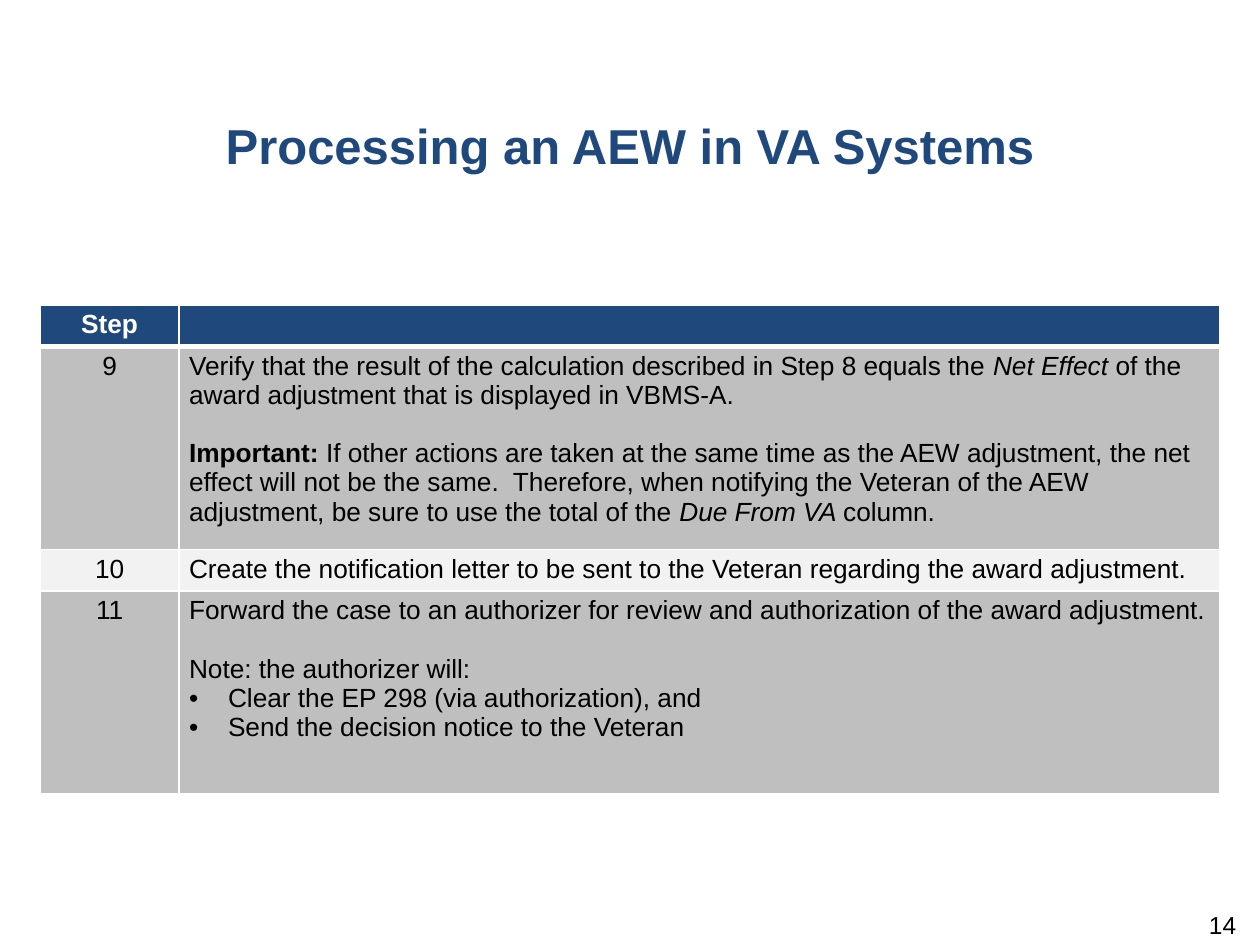
from lxml import etree
from pptx import Presentation
from pptx.dml.color import RGBColor
from pptx.enum.text import MSO_ANCHOR, PP_ALIGN
from pptx.oxml.ns import qn
from pptx.util import Inches, Pt

LEFT, CENTER, RIGHT = PP_ALIGN.LEFT, PP_ALIGN.CENTER, PP_ALIGN.RIGHT
TOP = MSO_ANCHOR.TOP
FONT = "Arial"
BODY_SIZE = 15
LINE_GAP = 16.7
COLORS = {
    "navy": "1F497D",
    "white": "FFFFFF",
    "black": "000000",
    "gray": "BFBFBF",
    "pale": "F2F2F2",
}

COLUMNS = (1.1, 8.26)
ROWS = (0.33, 1.61, 0.33, 1.61)

STEPS = [
    ("9", "gray", [
        ("plain", [
            ("Verify that the result of the calculation described in Step 8 equals the ", ""),
            ("Net Effect", "italic"),
            (" of the award adjustment that is displayed in VBMS-A.", ""),
        ]),
        ("gap", [
            ("Important:", "bold"),
            (" If other actions are taken at the same time as the AEW adjustment, "
             "the net effect will not be the same.  Therefore, when notifying the Veteran "
             "of the AEW adjustment, be sure to use the total of the ", ""),
            ("Due From VA ", "italic"),
            ("column.", ""),
        ]),
    ]),
    ("10", "pale", [
        ("plain", [("Create the notification letter to be sent to the Veteran "
                    "regarding the award adjustment.", "")]),
    ]),
    ("11", "gray", [
        ("plain", [("Forward the case to an authorizer for review and authorization "
                    "of the award adjustment.", "")]),
        ("gap", [("Note: the authorizer will:", "")]),
        ("bullet", [("Clear the EP 298 (via authorization), and", "")]),
        ("bullet", [("Send the decision notice to the Veteran", "")]),
    ]),
]


def color(name):
    return RGBColor.from_string(COLORS[name])


def style_span(span, size, ink, style=""):
    span.font.name = FONT
    span.font.size = Pt(size)
    span.font.color.rgb = color(ink)
    span.font.bold = style == "bold"
    span.font.italic = style == "italic"


def add_text(page, box, text, size, ink, align, insets, style=""):
    shape = page.shapes.add_textbox(*(Inches(length) for length in box))
    frame = shape.text_frame
    frame.word_wrap = True
    frame.vertical_anchor = TOP
    frame.margin_left = frame.margin_right = Inches(0.1)
    frame.margin_top, frame.margin_bottom = (Inches(inset) for inset in insets)
    frame.text = text
    para = frame.paragraphs[0]
    para.alignment = align
    style_span(para.runs[0], size, ink, style)


def add_bullet(para):
    properties = para._p.get_or_add_pPr()
    properties.set("marL", str(Inches(0.31)))
    properties.set("indent", str(-Inches(0.31)))
    etree.SubElement(properties, qn("a:buFont"), typeface=FONT)
    etree.SubElement(properties, qn("a:buChar"), char="•")


def add_borders(cell, widths):
    properties = cell._tc.get_or_add_tcPr()
    for side, width in zip(("lnL", "lnR", "lnT", "lnB"), widths):
        line = etree.SubElement(properties, qn("a:" + side), w=str(Pt(width)))
        fill = etree.SubElement(line, qn("a:solidFill"))
        etree.SubElement(fill, qn("a:srgbClr"), val=COLORS["white"])


def fill_cell(cell, paragraphs, background, ink, align):
    cell.fill.solid()
    cell.fill.fore_color.rgb = color(background)
    cell.vertical_anchor = TOP
    cell.margin_left = cell.margin_right = Inches(0.08)
    cell.margin_top = cell.margin_bottom = Inches(0.04)
    frame = cell.text_frame
    if not paragraphs:
        etree.SubElement(frame.paragraphs[0]._p, qn("a:endParaRPr"),
                         sz=str(BODY_SIZE * 100))
    for index, (kind, spans) in enumerate(paragraphs):
        para = frame.add_paragraph() if index else frame.paragraphs[0]
        para.alignment = align
        if kind == "gap":
            para.space_before = Pt(LINE_GAP)
        if kind == "bullet":
            add_bullet(para)
        for text, style in spans:
            span = para.add_run()
            span.text = text
            style_span(span, BODY_SIZE, ink, style)


def add_steps_table(page, box):
    shape = page.shapes.add_table(len(ROWS), len(COLUMNS),
                                  *(Inches(length) for length in box))
    table = shape.table
    for column, width in zip(table.columns, COLUMNS):
        column.width = Inches(width)
    for row, height in zip(table.rows, ROWS):
        row.height = Inches(height)
    for row_index in range(len(ROWS)):
        widths = (1, 1, 3 if row_index == 1 else 1, 3 if row_index == 0 else 1)
        for cell in table.rows[row_index].cells:
            add_borders(cell, widths)

    heading = [("plain", [("Step", "bold")])]
    fill_cell(table.cell(0, 0), heading, "navy", "white", CENTER)
    fill_cell(table.cell(0, 1), [], "navy", "white", LEFT)
    for index, (number, background, paragraphs) in enumerate(STEPS, start=1):
        label = [("plain", [(number, "")])]
        fill_cell(table.cell(index, 0), label, background, "black", CENTER)
        fill_cell(table.cell(index, 1), paragraphs, background, "black", LEFT)


def main():
    deck = Presentation()
    deck.slide_width, deck.slide_height = Inches(10), Inches(7.5)
    page = deck.slides.add_slide(deck.slide_layouts[6])
    add_text(page, (0, 0.87, 10, 1.19), "Processing an AEW in VA Systems",
             28, "navy", CENTER, (0.05, 0.05), "bold")
    add_text(page, (7.58, 7.22, 2.33, 0.4), "14", 14, "black", RIGHT, (0, 0.05))
    add_steps_table(page, (0.32, 2.42, sum(COLUMNS), sum(ROWS)))
    deck.save("out.pptx")


if __name__ == "__main__":
    main()
